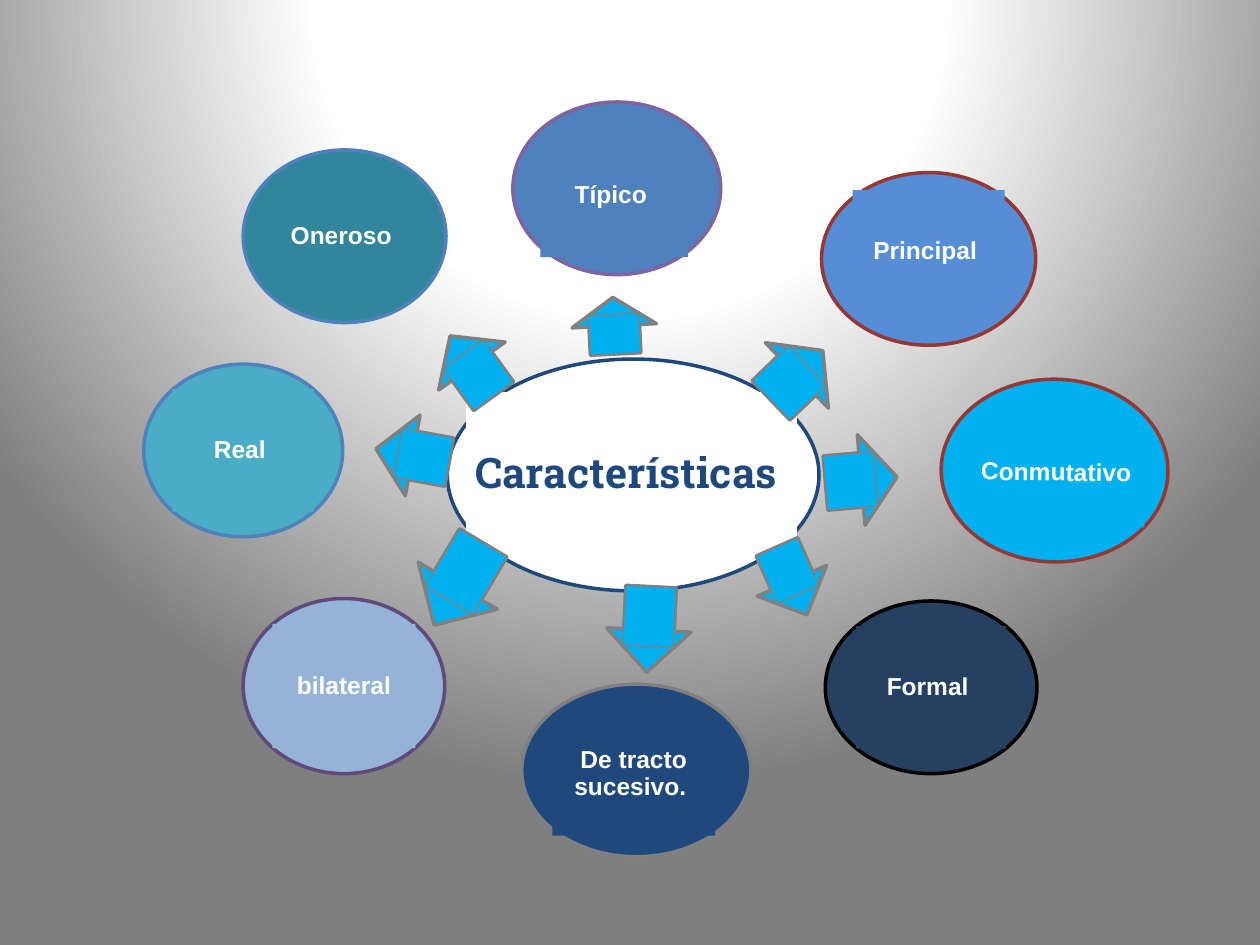
from math import cos, radians, sin

from pptx import Presentation
from pptx.dml.color import RGBColor
from pptx.enum.shapes import MSO_SHAPE
from pptx.enum.text import MSO_ANCHOR, MSO_AUTO_SIZE, PP_ALIGN
from pptx.oxml import parse_xml
from pptx.oxml.ns import nsdecls
from pptx.util import Inches, Pt

COLORS = {
    "white": "FFFFFF", "near_white": "FEFEFE", "dark_gray": "7F7F7F",
    "gray": "808080", "black": "000000", "navy": "1F497D",
    "midnight": "254061", "blue": "4F81BD", "cornflower": "558ED5",
    "sky": "00B0F0", "pale_blue": "95B3D7", "teal": "31859C",
    "aqua": "4BACC6", "purple": "8064A2", "plum": "604A7B",
    "maroon": "953735",
}

CENTER_BOX = (3.55, 2.85, 2.95, 1.84)
INSCRIBED = 0.71

ARROWS = [
    ((4.65, 2.25, 0.45, 0.67), 267.1),
    ((6.04, 2.62, 0.57, 0.72), 316.1),
    ((6.55, 3.45, 0.57, 0.72), 355.1),
    ((5.99, 4.31, 0.59, 0.6), 66.1),
    ((4.81, 4.66, 0.68, 0.67), 92.9),
    ((3.26, 4.27, 0.76, 0.73), 120.8),
    ((2.98, 3.29, 0.59, 0.65), 190.3),
    ((3.45, 2.58, 0.59, 0.65), 234.2),
]

TRAITS = [
    ("Típico ", (4.07, 0.81, 1.65, 1.37), "blue", "purple",
     {"shift": (-0.02, 0.06)}),
    ("Principal ", (6.52, 1.37, 1.7, 1.37), "cornflower", "maroon",
     {"shift": (0, -0.06)}),
    ("Conmutativo ", (7.47, 3.01, 1.8, 1.45), "sky", "maroon",
     {"shift": (0.04, 0.02), "label_size": (1.36, 0.84), "rotation": 0.9}),
    ("Formal ", (6.55, 4.77, 1.68, 1.37), "midnight", "black", {}),
    ("De tracto sucesivo. ", (4.14, 5.43, 1.82, 1.37), "navy", "gray",
     {"shift": (-0.02, 0.03)}),
    ("bilateral", (1.93, 4.75, 1.6, 1.39), "pale_blue", "plum", {}),
    ("Real ", (1.14, 2.89, 1.58, 1.37), "aqua", "blue", {}),
    ("Oneroso ", (1.93, 1.19, 1.61, 1.37), "teal", "blue", {}),
]


def rgb(name):
    return RGBColor.from_string(COLORS[name])


def paint(shape, fill, line=None, line_width=2):
    shape.fill.solid()
    shape.fill.fore_color.rgb = rgb(fill)
    if line:
        shape.line.color.rgb = rgb(line)
        shape.line.width = Pt(line_width)
    else:
        shape.line.fill.background()


def add_shape(slide, kind, box, fill, line=None, line_width=2, rotation=0):
    shape = slide.shapes.add_shape(kind, *map(Inches, box))
    shape.shadow.inherit = False
    shape.rotation = rotation
    paint(shape, fill, line, line_width)
    return shape


def write_text(shape, text, size=14, font="Arial", color="white"):
    frame = shape.text_frame
    frame.word_wrap = True
    frame.auto_size = MSO_AUTO_SIZE.NONE
    frame.vertical_anchor = MSO_ANCHOR.MIDDLE
    frame.margin_left = frame.margin_right = Inches(0.02)
    frame.margin_top = frame.margin_bottom = Inches(0.02)
    paragraph = frame.paragraphs[0]
    paragraph.alignment = PP_ALIGN.CENTER
    paragraph.line_spacing = 0.9
    run = paragraph.add_run()
    run.text = text
    run.font.size = Pt(size)
    run.font.name = font
    run.font.bold = True
    run.font.color.rgb = rgb(color)


def centered_box(center_x, center_y, width, height):
    return center_x - width / 2, center_y - height / 2, width, height


def set_background(slide):
    stops = [(0, "white"), (40, "near_white"), (100, "dark_gray")]
    stop_xml = "".join(
        f'<a:gs pos="{position * 1000}"><a:srgbClr val="{COLORS[name]}"/></a:gs>'
        for position, name in stops
    )
    background = parse_xml(
        f'<p:bg {nsdecls("p", "a")}><p:bgPr><a:gradFill rotWithShape="1">'
        f'<a:gsLst>{stop_xml}</a:gsLst><a:path path="circle">'
        '<a:fillToRect l="50000" t="-80000" r="50000" b="180000"/>'
        '</a:path></a:gradFill><a:effectLst/></p:bgPr></p:bg>'
    )
    slide.element.cSld.insert(0, background)


def add_center(slide, box):
    left, top, width, height = box
    ellipse = add_shape(slide, MSO_SHAPE.OVAL, box, "white", "navy")
    title = slide.shapes.title
    title.left, title.top = Inches(left + 0.15), Inches(top + 0.27)
    title.width, title.height = Inches(width - 0.33), Inches(height - 0.54)
    paint(title, "white", "white", 0.75)
    write_text(title, "Características ", size=24, font="Roboto Slab", color="navy")
    ellipse.element.addnext(title.element)


def add_arrow(slide, box, rotation):
    left, top, width, height = box
    arrow = add_shape(slide, MSO_SHAPE.RIGHT_ARROW, box, "sky", "gray",
                      rotation=rotation)
    arrow.adjustments[0] = 0.6
    arrow.adjustments[1] = 0.5
    angle = radians(rotation)
    setback = 0.15 * width
    shaft = centered_box(left + width / 2 - setback * cos(angle),
                         top + height / 2 - setback * sin(angle),
                         0.7 * width, 0.6 * height)
    upright = rotation if cos(angle) > 0 else (rotation + 180) % 360
    add_shape(slide, MSO_SHAPE.RECTANGLE, shaft, "sky", "gray", 0.75, upright)


def add_trait(slide, text, box, fill, line, shift=(0, 0), label_size=None,
              rotation=0):
    left, top, width, height = box
    add_shape(slide, MSO_SHAPE.OVAL, box, fill, line, rotation=rotation)
    label_size = label_size or (INSCRIBED * width, INSCRIBED * height)
    label_box = centered_box(left + width / 2 + shift[0],
                             top + height / 2 + shift[1], *label_size)
    label = add_shape(slide, MSO_SHAPE.RECTANGLE, label_box, fill,
                      rotation=rotation)
    write_text(label, text)


def main():
    presentation = Presentation()
    presentation.slide_width = Inches(10)
    presentation.slide_height = Inches(7.5)
    slide = presentation.slides.add_slide(presentation.slide_layouts[5])
    set_background(slide)
    add_center(slide, CENTER_BOX)
    for (arrow_box, rotation), (text, box, fill, line, options) in zip(ARROWS, TRAITS):
        add_arrow(slide, arrow_box, rotation)
        add_trait(slide, text, box, fill, line, **options)
    presentation.save("out.pptx")


if __name__ == "__main__":
    main()
